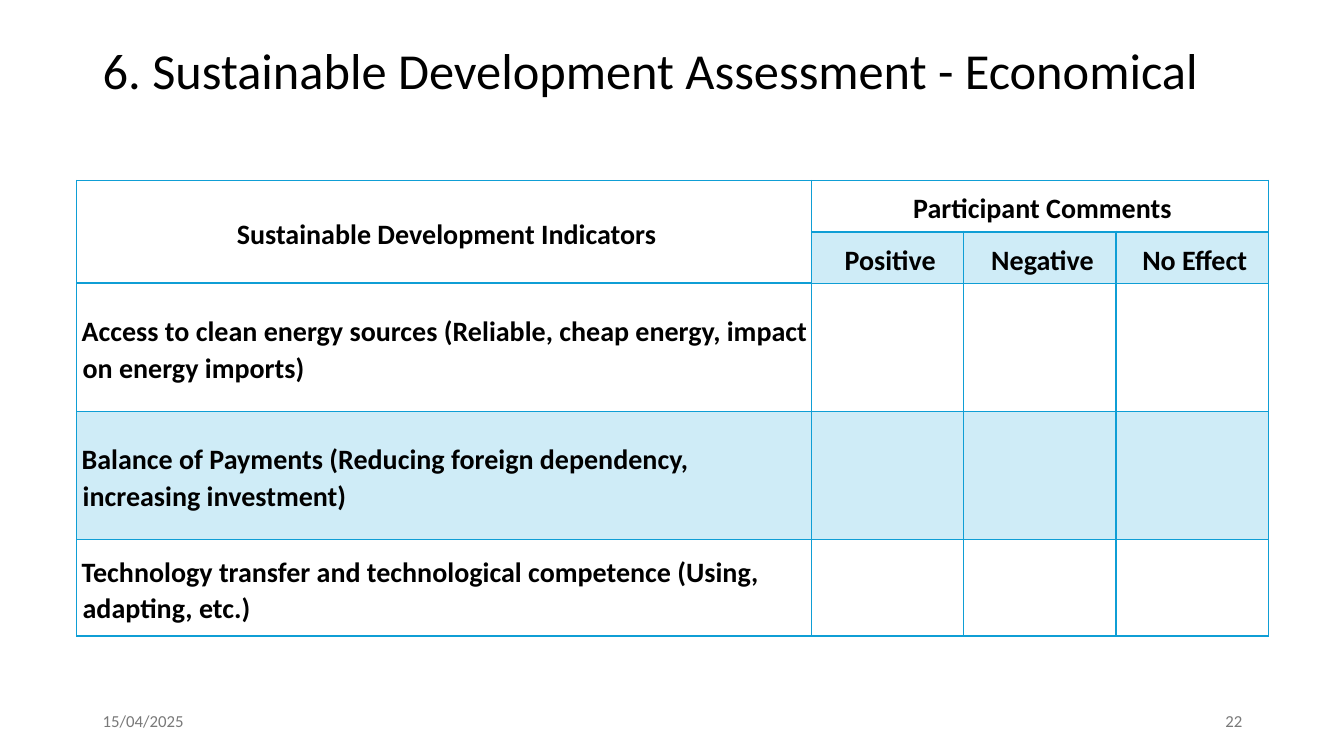
from lxml import etree
from pptx import Presentation
from pptx.dml.color import RGBColor
from pptx.enum.text import MSO_ANCHOR, PP_ALIGN
from pptx.oxml.ns import qn
from pptx.util import Inches, Pt

MIDDLE = MSO_ANCHOR.MIDDLE
LEFT, CENTER, RIGHT = PP_ALIGN.LEFT, PP_ALIGN.CENTER, PP_ALIGN.RIGHT
FONT = "Calibri"
BLACK, GREY, WHITE = "000000", "797979", "FFFFFF"
BORDER, BAND = "0F9ED5", "CFECF7"

COLUMN_WIDTHS = [7.29, 1.51, 1.51, 1.51]
ROW_HEIGHTS = [0.51, 0.51, 1.27, 1.27, 0.96]
BANDED_ROW = 3
RATINGS = ["Positive", "Negative", "No Effect"]
INDICATORS = [
    "Access to clean energy sources (Reliable, cheap energy, impact on energy imports)",
    "Balance of Payments (Reducing foreign dependency, increasing investment)",
    "Technology transfer and technological competence (Using, adapting, etc.)",
]


def color(value):
    return RGBColor.from_string(value)


def write(frame, text, size, font_color, align, bold=False, spacing=1.0):
    frame.text = text
    para = frame.paragraphs[0]
    para.alignment = align
    para.line_spacing = spacing
    for span in para.runs:
        span.font.name = FONT
        span.font.size = Pt(size)
        span.font.bold = bold
        span.font.color.rgb = color(font_color)
    return para


def add_text(page, left, top, width, height, text, size, font_color, align=LEFT, spacing=1.0):
    box = page.shapes.add_textbox(Inches(left), Inches(top), Inches(width), Inches(height))
    frame = box.text_frame
    frame.word_wrap = True
    frame.vertical_anchor = MIDDLE
    write(frame, text, size, font_color, align, spacing=spacing)


def set_borders(cell, top, bottom):
    properties = cell._tc.get_or_add_tcPr()
    for side, points in (("L", 1), ("R", 1), ("T", top), ("B", bottom)):
        line = etree.SubElement(properties, qn(f"a:ln{side}"), w=str(Pt(points)))
        fill = etree.SubElement(line, qn("a:solidFill"))
        etree.SubElement(fill, qn("a:srgbClr"), val=BORDER)


def format_cell(cell, row, column):
    rating_header = row == 1 and column > 0
    below_header = rating_header or (row == 2 and column == 0)
    header = row == 0 or (row == 1 and column == 0)
    set_borders(cell, 2 if below_header else 1, 2 if header else 1)
    cell.fill.solid()
    cell.fill.fore_color.rgb = color(BAND if rating_header or row == BANDED_ROW else WHITE)
    cell.vertical_anchor = MIDDLE
    cell.margin_left, cell.margin_top = Inches(0.05), Inches(0.04)
    cell.margin_right = cell.margin_bottom = Inches(0)


def write_cell(cell, text, align):
    para = write(cell.text_frame, text, 20, BLACK, align, bold=True, spacing=1.07)
    properties = para._p.get_or_add_pPr()
    properties.set("marL", str(Inches(0.01)))
    properties.set("indent", str(Inches(-0.01)))


def add_assessment_table(page):
    shape = page.shapes.add_table(
        len(ROW_HEIGHTS), len(COLUMN_WIDTHS), Inches(0.76), Inches(1.79),
        Inches(sum(COLUMN_WIDTHS)), Inches(sum(ROW_HEIGHTS)))
    table = shape.table
    table.first_row = table.horz_banding = False
    for column, width in enumerate(COLUMN_WIDTHS):
        table.columns[column].width = Inches(width)
    for row, height in enumerate(ROW_HEIGHTS):
        table.rows[row].height = Inches(height)
        for column in range(len(COLUMN_WIDTHS)):
            format_cell(table.cell(row, column), row, column)
    table.cell(0, 0).merge(table.cell(1, 0))
    table.cell(0, 1).merge(table.cell(0, 3))
    write_cell(table.cell(0, 0), "Sustainable Development Indicators", CENTER)
    write_cell(table.cell(0, 1), "Participant Comments", CENTER)
    for column, rating in enumerate(RATINGS, 1):
        write_cell(table.cell(1, column), rating, CENTER)
    for row, indicator in enumerate(INDICATORS, 2):
        write_cell(table.cell(row, 0), indicator, LEFT)


def main():
    deck = Presentation()
    deck.slide_width, deck.slide_height = Inches(13.33), Inches(7.5)
    page = deck.slides.add_slide(deck.slide_layouts[6])
    page.background.fill.solid()
    page.background.fill.fore_color.rgb = color(WHITE)
    add_text(page, 0.92, 0.2, 11.5, 1.06,
             "6. Sustainable Development Assessment - Economical", 36, BLACK, spacing=0.9)
    add_assessment_table(page)
    add_text(page, 0.92, 6.95, 3, 0.4, "15/04/2025", 12, GREY)
    add_text(page, 9.42, 6.95, 3, 0.4, "22", 12, GREY, RIGHT)
    deck.save("out.pptx")


if __name__ == "__main__":
    main()
